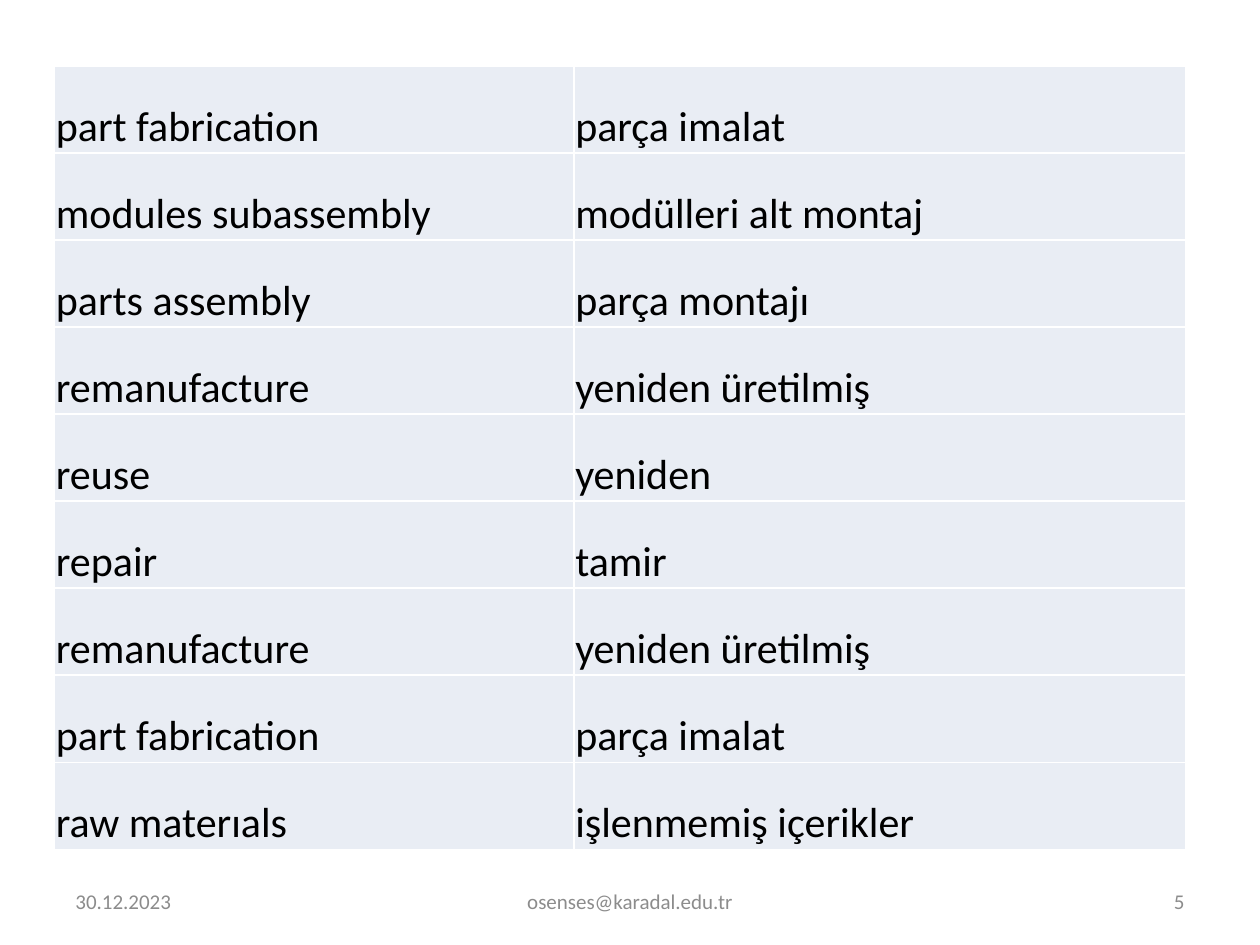
"""Builds a vocabulary slide with an English-Turkish table and a footer."""
from lxml.etree import SubElement
from pptx import Presentation
from pptx.dml.color import RGBColor
from pptx.enum.text import MSO_VERTICAL_ANCHOR as Anchor, PP_PARAGRAPH_ALIGNMENT as Align
from pptx.oxml.ns import qn
from pptx.util import Pt

BLACK = RGBColor(0x00, 0x00, 0x00)
GRAY = RGBColor(0x8C, 0x8C, 0x8C)
WHITE = RGBColor(0xFF, 0xFF, 0xFF)
PALE_BLUE = RGBColor(0xE9, 0xED, 0xF4)

COLUMN_WIDTHS = (296.8, 349.4)
ROW_HEIGHT = 49.75
VOCABULARY = (
    ("part fabrication", "parça imalat"),
    ("modules subassembly", "modülleri alt montaj"),
    ("parts assembly", "parça montajı"),
    ("remanufacture", "yeniden üretilmiş"),
    ("reuse", "yeniden"),
    ("repair", "tamir"),
    ("remanufacture", "yeniden üretilmiş"),
    ("part fabrication", "parça imalat"),
    ("raw materıals", "işlenmemiş içerikler"),
)
FOOTER = (
    (36, 168, "30.12.2023", Align.LEFT),
    (246, 228, "osenses@karadal.edu.tr", Align.CENTER),
    (516, 168, "5", Align.RIGHT),
)


class SlideBuilder:
    font = "Calibri"
    table_size = 24
    footer_size = 12

    def __init__(self, slide):
        self.slide = slide

    def text_run(self, paragraph, text, size, color, alignment=Align.LEFT):
        paragraph.alignment = alignment
        run = paragraph.add_run()
        run.text = text
        run.font.name = self.font
        run.font.size = Pt(size)
        run.font.color.rgb = color

    def border(self, cell):
        properties = cell._tc.get_or_add_tcPr()
        for position, side in enumerate(("a:lnL", "a:lnR", "a:lnT", "a:lnB")):
            line = SubElement(properties, qn(side), w=str(Pt(1)))
            fill = SubElement(line, qn("a:solidFill"))
            SubElement(fill, qn("a:srgbClr"), val=str(WHITE))
            properties.insert(position, line)

    def cell(self, cell, text):
        cell.fill.solid()
        cell.fill.fore_color.rgb = PALE_BLUE
        cell.vertical_anchor = Anchor.BOTTOM
        cell.margin_left = cell.margin_right = cell.margin_top = Pt(0.75)
        cell.margin_bottom = Pt(0)
        self.text_run(cell.text_frame.paragraphs[0], text, self.table_size, BLACK)
        self.border(cell)

    def table(self, left, top, widths, row_height, rows):
        shape = self.slide.shapes.add_table(
            len(rows), len(widths), Pt(left), Pt(top),
            Pt(sum(widths)), Pt(row_height * len(rows)))
        table = shape.table
        table.first_row = table.horz_banding = False
        for column, width in zip(table.columns, widths):
            column.width = Pt(width)
        for row, texts in zip(table.rows, rows):
            row.height = Pt(row_height)
            for cell, text in zip(row.cells, texts):
                self.cell(cell, text)

    def footer(self, left, width, text, alignment):
        shape = self.slide.shapes.add_textbox(Pt(left), Pt(500.5), Pt(width), Pt(28.75))
        frame = shape.text_frame
        frame.word_wrap = True
        frame.vertical_anchor = Anchor.MIDDLE
        self.text_run(frame.paragraphs[0], text, self.footer_size, GRAY, alignment)


def main():
    presentation = Presentation()
    presentation.slide_width, presentation.slide_height = Pt(720), Pt(540)
    builder = SlideBuilder(presentation.slides.add_slide(presentation.slide_layouts[6]))
    builder.table(31.2, 37.6, COLUMN_WIDTHS, ROW_HEIGHT, VOCABULARY)
    for left, width, text, alignment in FOOTER:
        builder.footer(left, width, text, alignment)
    presentation.save("out.pptx")


if __name__ == "__main__":
    main()
